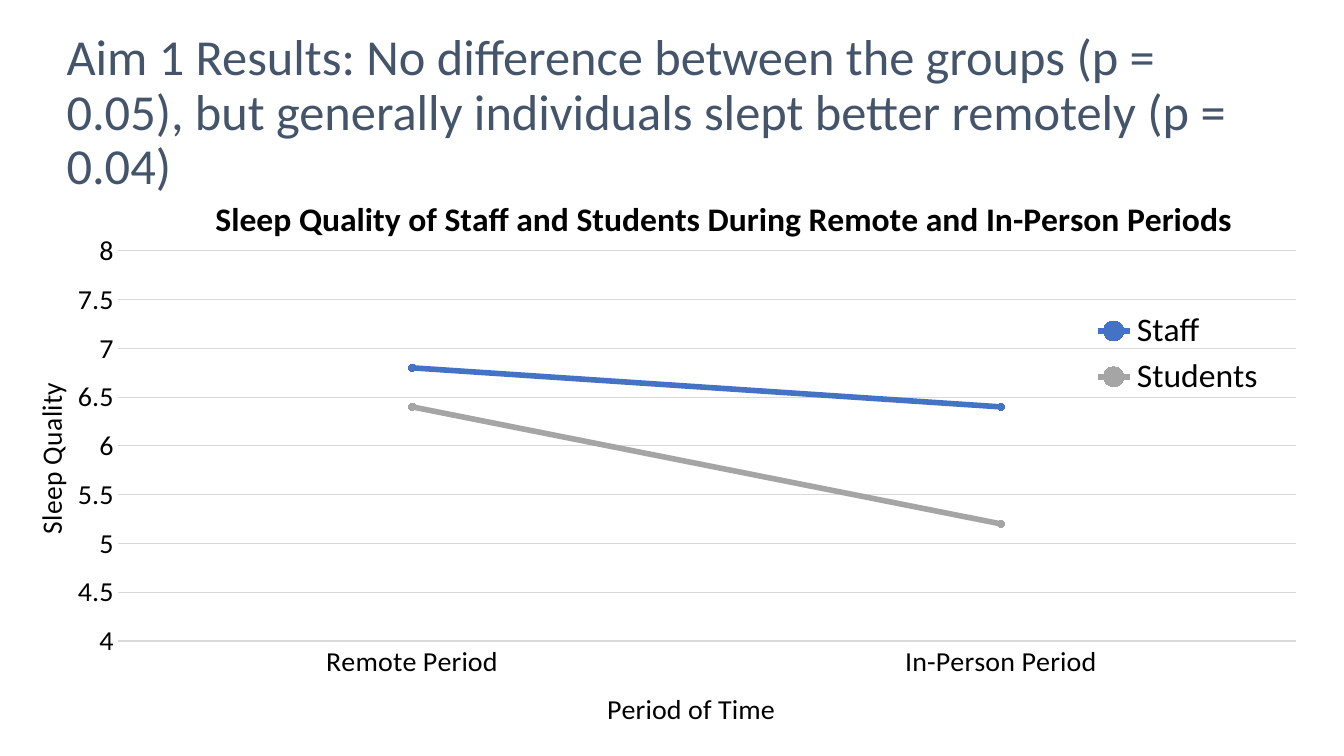
import pptx
import pptx.chart.data
import pptx.dml.color
import pptx.enum.chart
import pptx.enum.text
import pptx.oxml
import pptx.oxml.ns
import pptx.util
from pptx.util import Inches

BLACK = "000000"
GRID = "D9D9D9"
TITLE_COLOUR = "44546A"


def colour(value):
    return pptx.dml.color.RGBColor.from_string(value)


class SlideBuilder:
    font_name = "Calibri"

    def __init__(self, presentation):
        self.slide = presentation.slides.add_slide(presentation.slide_layouts[5])

    def style(self, font, size, hex_colour, bold=False):
        font.name = self.font_name
        font.size = pptx.util.Pt(size)
        font.bold = bold
        font.color.rgb = colour(hex_colour)

    def add_text(self, frame, text, size, hex_colour, bold=False):
        paragraph = frame.paragraphs[0]
        run = paragraph.add_run()
        run.text = text
        self.style(run.font, size, hex_colour, bold)
        return paragraph

    def title(self, text, left, top, width, height):
        heading = self.slide.shapes.title
        heading.left, heading.top = Inches(left), Inches(top)
        heading.width, heading.height = Inches(width), Inches(height)
        frame = heading.text_frame
        frame.word_wrap = True
        frame.auto_size = pptx.enum.text.MSO_AUTO_SIZE.NONE
        frame.vertical_anchor = pptx.enum.text.MSO_ANCHOR.MIDDLE
        paragraph = self.add_text(frame, text, 36, TITLE_COLOUR)
        paragraph.alignment = pptx.enum.text.PP_ALIGN.LEFT
        paragraph.line_spacing = 0.9

    def place(self, element, index, **settings):
        qn = pptx.oxml.ns.qn
        for old in element.findall(qn("c:layout")):
            element.remove(old)
        entries = "".join(f'<c:{tag} val="{value}"/>' for tag, value in settings.items())
        element.insert(index, pptx.oxml.parse_xml(
            f'<c:layout {pptx.oxml.ns.nsdecls("c")}>'
            f"<c:manualLayout>{entries}</c:manualLayout></c:layout>"))

    def chart_label(self, label, text, size, x, y, bold=False):
        self.add_text(label.text_frame, text, size, BLACK, bold)
        self.place(label._element, 1, xMode="edge", yMode="edge", x=x, y=y)

    def axis(self, axis, text, x, y):
        axis.has_title = True
        self.chart_label(axis.axis_title, text, 20, x, y)
        axis.major_tick_mark = pptx.enum.chart.XL_TICK_MARK.NONE
        axis.minor_tick_mark = pptx.enum.chart.XL_TICK_MARK.NONE
        axis.format.line.fill.background()
        self.style(axis.tick_labels.font, 20, BLACK)

    def legend(self, chart):
        chart.has_legend = True
        chart.legend.position = pptx.enum.chart.XL_LEGEND_POSITION.CORNER
        chart.legend.include_in_layout = False
        self.style(chart.legend.font, 24, BLACK)
        self.place(chart.legend._element, 1, xMode="edge", yMode="edge",
                   x=0.82, y=0.23, w=0.14, h=0.18)

    def line_chart(self, heading, periods, groups, left, top, width, height):
        data = pptx.chart.data.CategoryChartData()
        data.categories = periods
        for name, scores, _ in groups:
            data.add_series(name, scores)
        chart = self.slide.shapes.add_chart(
            pptx.enum.chart.XL_CHART_TYPE.LINE_MARKERS,
            Inches(left), Inches(top), Inches(width), Inches(height), data).chart
        self.style(chart.font, 10, BLACK)
        chart.has_title = True
        self.chart_label(chart.chart_title, heading, 24, 0.15, 0.02, bold=True)

        self.axis(chart.category_axis, "Period of Time", 0.45, 0.93)
        quality = chart.value_axis
        self.axis(quality, "Sleep Quality", 0.01, 0.37)
        quality.minimum_scale, quality.maximum_scale = 4, 8
        quality.major_unit = 0.5
        quality.has_major_gridlines = True
        quality.major_gridlines.format.line.color.rgb = colour(GRID)
        quality.major_gridlines.format.line.width = pptx.util.Pt(0.75)

        chart.plots[0].vary_by_categories = False
        for series, (_, _, hex_colour) in zip(chart.plots[0].series, groups):
            series.smooth = False
            series.format.line.color.rgb = colour(hex_colour)
            series.format.line.width = pptx.util.Pt(4)
            series.marker.style = pptx.enum.chart.XL_MARKER_STYLE.CIRCLE
            series.marker.size = 5
            series.marker.format.fill.solid()
            series.marker.format.fill.fore_color.rgb = colour(hex_colour)
            series.marker.format.line.color.rgb = colour(hex_colour)

        self.legend(chart)
        plot_area = chart.element.find(".//" + pptx.oxml.ns.qn("c:plotArea"))
        self.place(plot_area, 0, layoutTarget="inner", xMode="edge", yMode="edge",
                   x=0.08, y=0.13, w=0.9, h=0.72)


def main():
    presentation = pptx.Presentation()
    presentation.slide_width = Inches(13.33)
    presentation.slide_height = Inches(7.5)
    results = SlideBuilder(presentation)
    results.title(
        "Aim 1 Results: No difference between the groups (p = 0.05), "
        "but generally individuals slept better remotely (p = 0.04)",
        0.56, 0.47, 12.18, 1.32)
    results.line_chart(
        "Sleep Quality of Staff and Students During Remote and In-Person Periods",
        ["Remote Period", "In-Person Period"],
        [("Staff", (6.8, 6.4), "4472C4"), ("Students", (6.4, 5.2), "A5A5A5")],
        0.13, 1.79, 12.98, 5.5)
    presentation.save("out.pptx")


if __name__ == "__main__":
    main()
